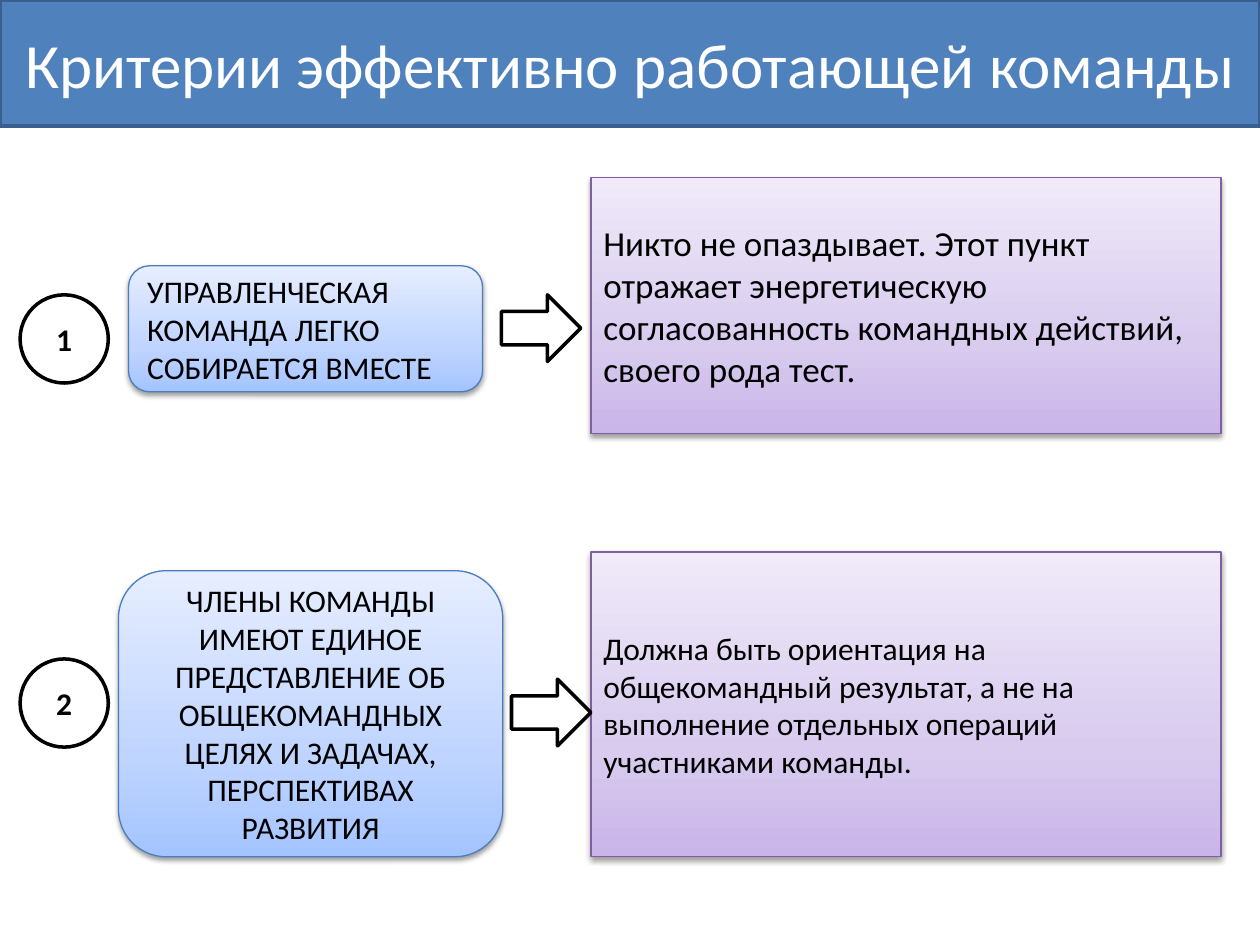
"""Build a slide of two criteria of an effective team."""

from dataclasses import dataclass
import copy

import lxml.etree
import pptx
import pptx.dml.color
import pptx.enum.shapes
import pptx.enum.text
import pptx.oxml.ns
import pptx.util

RGB = pptx.dml.color.RGBColor
Inches = pptx.util.Inches
Pt = pptx.util.Pt
Kind = pptx.enum.shapes.MSO_SHAPE
Align = pptx.enum.text.PP_ALIGN
qn = pptx.oxml.ns.qn

BLACK = RGB(0, 0, 0)
WHITE = RGB(255, 255, 255)
BAR = RGB(0x4F, 0x81, 0xBD)
EDGE = RGB(0x3A, 0x5F, 0x8C)
Box = tuple[float, float, float, float]


@dataclass
class Tint:
    stops: tuple[RGB, RGB, RGB]
    line: RGB


@dataclass
class Item:
    num: str
    name: str
    note: str
    align: Align
    size: int
    disc: Box
    label: Box
    arrow: Box
    panel: Box


BLUE = Tint((RGB(0xA4, 0xC4, 0xFF), RGB(0xBF, 0xD4, 0xFF), RGB(0xE6, 0xEE, 0xFF)),
            RGB(0x4B, 0x7E, 0xBC))
LILAC = Tint((RGB(0xC9, 0xB5, 0xE8), RGB(0xD8, 0xCB, 0xEE), RGB(0xF0, 0xEA, 0xF9)),
             RGB(0x7D, 0x60, 0xA0))

ITEMS = [
    Item("1", "УПРАВЛЕНЧЕСКАЯ КОМАНДА ЛЕГКО СОБИРАЕТСЯ ВМЕСТЕ",
         "Никто не опаздывает. Этот пункт отражает энергетическую "
         "согласованность командных действий, своего рода тест.",
         Align.LEFT, 20, (0.16, 2.34, 0.7, 0.7), (1.02, 2.11, 2.81, 1),
         (3.98, 2.34, 0.63, 0.53), (4.69, 1.41, 5, 2.03)),
    Item("2", "ЧЛЕНЫ КОМАНДЫ ИМЕЮТ ЕДИНОЕ ПРЕДСТАВЛЕНИЕ ОБ ОБЩЕКОМАНДНЫХ "
         "ЦЕЛЯХ И ЗАДАЧАХ, ПЕРСПЕКТИВАХ РАЗВИТИЯ",
         "Должна быть ориентация на общекомандный результат, а не на "
         "выполнение отдельных операций участниками команды.",
         Align.CENTER, 18, (0.16, 5.23, 0.7, 0.7), (0.94, 4.53, 3.05, 2.27),
         (4.06, 5.39, 0.63, 0.53), (4.69, 4.38, 5, 2.42)),
]


def write(shape, text: str, size: int, color: RGB, align: Align, bold: bool = False) -> None:
    frame = shape.text_frame
    frame.text = text
    frame.word_wrap = True
    frame.auto_size = pptx.enum.text.MSO_AUTO_SIZE.NONE
    frame.vertical_anchor = pptx.enum.text.MSO_ANCHOR.MIDDLE
    para = frame.paragraphs[0]
    para.alignment = align
    para.font.name = "Calibri"
    para.font.size = Pt(size)
    para.font.bold = bold
    para.font.color.rgb = color


def paint(shape, fill: RGB, line: RGB, width: float) -> None:
    shape.fill.solid()
    shape.fill.fore_color.rgb = fill
    shape.line.color.rgb = line
    shape.line.width = Pt(width)


def shade(shape, tint: Tint) -> None:
    shape.fill.gradient()
    shape.fill.gradient_angle = 90
    stops = shape.element.spPr.find(".//" + qn("a:gsLst"))
    stops.append(copy.deepcopy(stops[0]))
    for stop, color, place in zip(shape.fill.gradient_stops, tint.stops, (0, 0.35, 1)):
        stop.color.rgb = color
        stop.position = place
    shape.line.color.rgb = tint.line
    shape.line.width = Pt(0.75)
    glow = lxml.etree.SubElement(
        shape.element.spPr.find(qn("a:effectLst")), qn("a:outerShdw"),
        blurRad=str(Pt(3.1)), dist=str(Pt(1.6)), dir="5400000", rotWithShape="0")
    tone = lxml.etree.SubElement(glow, qn("a:srgbClr"), val=str(BLACK))
    lxml.etree.SubElement(tone, qn("a:alpha"), val="38000")


def add(slide, kind: Kind, box: Box):
    shape = slide.shapes.add_shape(kind, *map(Inches, box))
    shape.shadow.inherit = False
    return shape


def draw(slide, item: Item) -> None:
    label = add(slide, Kind.ROUNDED_RECTANGLE, item.label)
    shade(label, BLUE)
    write(label, item.name, 18, BLACK, item.align)
    disc = add(slide, Kind.OVAL, item.disc)
    paint(disc, WHITE, BLACK, 2)
    write(disc, item.num, 18, BLACK, Align.CENTER, True)
    panel = add(slide, Kind.RECTANGLE, item.panel)
    shade(panel, LILAC)
    write(panel, item.note, item.size, BLACK, Align.LEFT)
    paint(add(slide, Kind.RIGHT_ARROW, item.arrow), WHITE, BLACK, 2)


def main() -> None:
    deck = pptx.Presentation()
    deck.slide_width, deck.slide_height = Inches(10), Inches(7.5)
    slide = deck.slides.add_slide(deck.slide_layouts[5])
    title = slide.shapes.title
    title.left, title.top, title.width, title.height = map(Inches, (0, 0, 10, 1))
    paint(title, BAR, EDGE, 2)
    write(title, "Критерии эффективно работающей команды", 36, WHITE, Align.CENTER)
    for item in ITEMS:
        draw(slide, item)
    deck.save("out.pptx")


if __name__ == "__main__":
    main()
